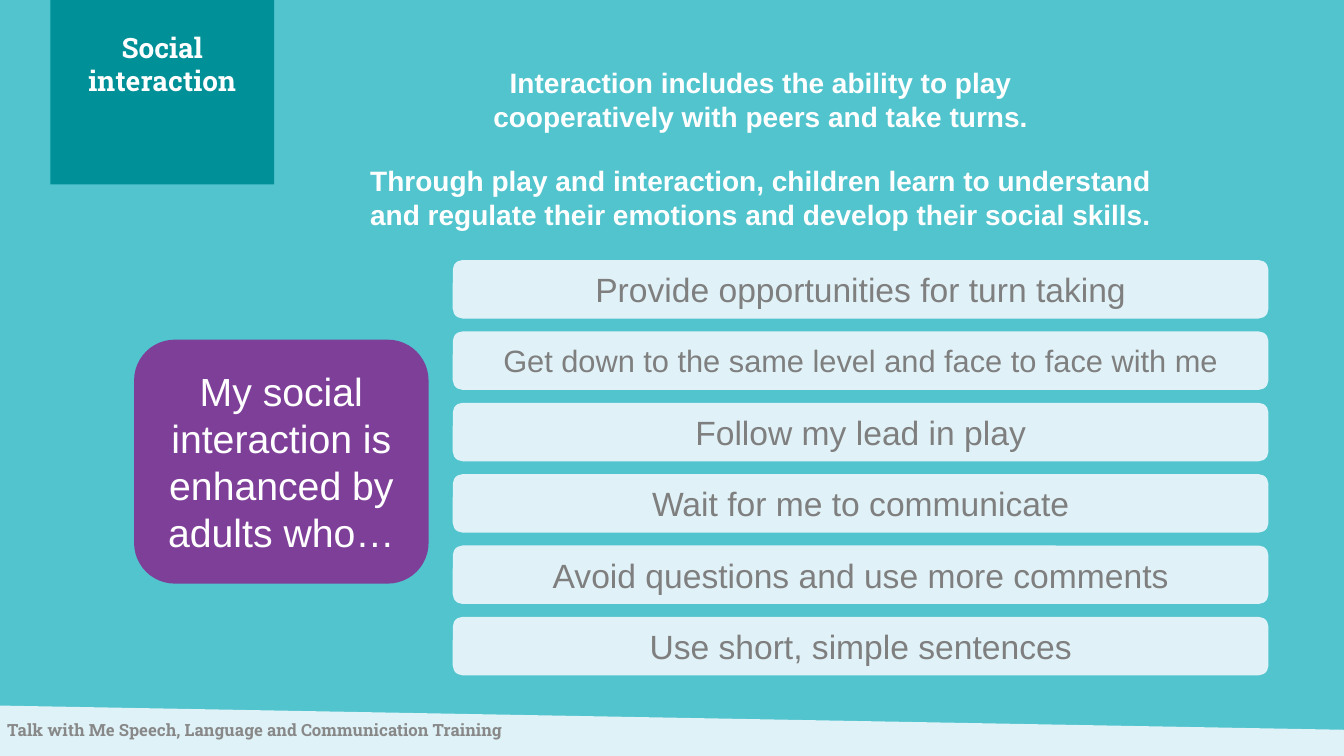
from dataclasses import dataclass

from lxml import etree
from pptx import Presentation
from pptx.dml.color import RGBColor
from pptx.enum.shapes import MSO_SHAPE as SHAPE
from pptx.enum.text import MSO_ANCHOR as ANCHOR, MSO_AUTO_SIZE as AUTO, PP_ALIGN as ALIGN
from pptx.oxml.ns import qn
from pptx.util import Inches, Pt


@dataclass(frozen=True)
class Theme:
    background: str = "51C4CE"
    band: str = "DFF2F7"
    tile: str = "009098"
    prompt: str = "7E3F99"
    row: str = "E0F2F8"
    white: str = "FFFFFF"
    row_text: str = "7F7F7F"
    footer_text: str = "888888"
    sans: str = "Arial"
    slab: str = "Roboto Slab"
    prompt_size: int = 28
    row_size: int = 24
    long_row_size: int = 22
    heading_size: int = 20
    footer_size: int = 12
    heading_pitch: int = 24


@dataclass(frozen=True)
class Box:
    left: float
    top: float
    width: float
    height: float

    def share(self, x, y, w, h):
        """Return the box at the given percentages of this one."""
        return Box(self.left + self.width * x / 100, self.top + self.height * y / 100,
                   self.width * w / 100, self.height * h / 100)

    @property
    def emu(self):
        return [Inches(v) for v in (self.left, self.top, self.width, self.height)]


T = Theme()
PAGE = Box(0, 0, 13.33, 7.5)
INTRO = [
    "Interaction includes the ability to play\vcooperatively with peers and take turns.",
    "Through play and interaction, children learn to understand\v"
    "and regulate their emotions and develop their social skills.",
]
ADVICE = [
    ("Provide opportunities for turn taking", T.row_size),
    ("Get down to the same level and face to face with me", T.long_row_size),
    ("Follow my lead in play", T.row_size),
    ("Wait for me to communicate", T.row_size),
    ("Avoid questions and use more comments", T.row_size),
    ("Use short, simple sentences", T.row_size),
]


def paint(sp, color):
    sp.fill.solid()
    sp.fill.fore_color.rgb = RGBColor.from_string(color)
    sp.line.fill.background()
    sp.shadow.inherit = False


def write(sp, *paragraphs, size, color, font=T.sans, bold=False, align=ALIGN.CENTER,
          anchor=ANCHOR.TOP, insets=(0, 0), pitch=None, gap=0):
    """Fill a shape with paragraphs; insets are horizontal and vertical."""
    tf = sp.text_frame
    tf.word_wrap, tf.auto_size, tf.vertical_anchor = True, AUTO.NONE, anchor
    tf.margin_left = tf.margin_right = Inches(insets[0])
    tf.margin_top = tf.margin_bottom = Inches(insets[1])
    for i, text in enumerate(paragraphs):
        p = tf.add_paragraph() if i else tf.paragraphs[0]
        p.text, p.alignment = text, align
        p.space_before = Pt(gap if i else 0)
        if pitch:
            p.line_spacing = Pt(pitch)
        for r in p.runs:
            r.font.size, r.font.name, r.font.bold = Pt(size), font, bold
            r.font.color.rgb = RGBColor.from_string(color)


def place(sp, box):
    sp.left, sp.top, sp.width, sp.height = box.emu


def remove_bullets(sp):
    for p in sp.text_frame.paragraphs:
        props = p._p.get_or_add_pPr()
        props.set("marL", "0")
        props.set("indent", "0")
        etree.SubElement(props, qn("a:buNone"))


def add_footer(s, box):
    left, top, width, height = box.emu
    outline = s.shapes.build_freeform(left, top)
    outline.add_line_segments([(left, top + height), (left + width, top + height),
                               (left + width, top + int(height * 0.48))])
    paint(outline.convert_to_shape(), T.band)
    label = s.shapes.add_textbox(*box.share(0.53, 28, 64.14, 40).emu)
    write(label, "Talk with Me Speech, Language and Communication Training",
          size=T.footer_size, color=T.footer_text, font=T.slab, bold=True, align=ALIGN.LEFT)


def add_title(s, box):
    paint(s.shapes.add_shape(SHAPE.RECTANGLE, *box.emu), T.tile)
    title = s.shapes.title
    place(title, box.share(0, 16.4, 100, 83.6))
    write(title, "Social interaction", size=T.heading_size, color=T.white, font=T.slab,
          bold=True, pitch=T.heading_pitch)
    title.element.getparent().append(title.element)  # in front of the tile


def add_intro(s, box):
    body = s.placeholders[1]
    place(body, box)
    write(body, *INTRO, size=T.heading_size, color=T.white, bold=True,
          pitch=T.heading_pitch, gap=22)
    remove_bullets(body)


def add_card(s, box, text, fill, **style):
    card = s.shapes.add_shape(SHAPE.ROUNDED_RECTANGLE, *box.emu)
    paint(card, fill)
    write(card, text, anchor=ANCHOR.MIDDLE, insets=(0.1, 0.05), **style)


def add_advice(s, box):
    """Place the prompt card at the left and evenly spaced rows at the right."""
    add_card(s, box.share(0, 19.17, 25.96, 58.74),
             "My social interaction is enhanced by adults who…", T.prompt,
             size=T.prompt_size, color=T.white)
    row_height = 14.08
    step = (100 - row_height) / (len(ADVICE) - 1)
    for i, (text, size) in enumerate(ADVICE):
        add_card(s, box.share(28.09, i * step, 71.91, row_height), text, T.row,
                 size=size, color=T.row_text)


def main():
    prs = Presentation()
    prs.slide_width, prs.slide_height = Inches(PAGE.width), Inches(PAGE.height)
    s = prs.slides.add_slide(prs.slide_layouts[1])
    s.background.fill.solid()
    s.background.fill.fore_color.rgb = RGBColor.from_string(T.background)
    add_footer(s, PAGE.share(0, 93.33, 100, 6.67))
    add_intro(s, PAGE.share(15.68, 8.67, 81.85, 22))
    add_title(s, PAGE.share(3.75, 0, 16.65, 24.4))
    add_advice(s, PAGE.share(9.98, 34.4, 84.4, 54.93))
    prs.save("out.pptx")


if __name__ == "__main__":
    main()
